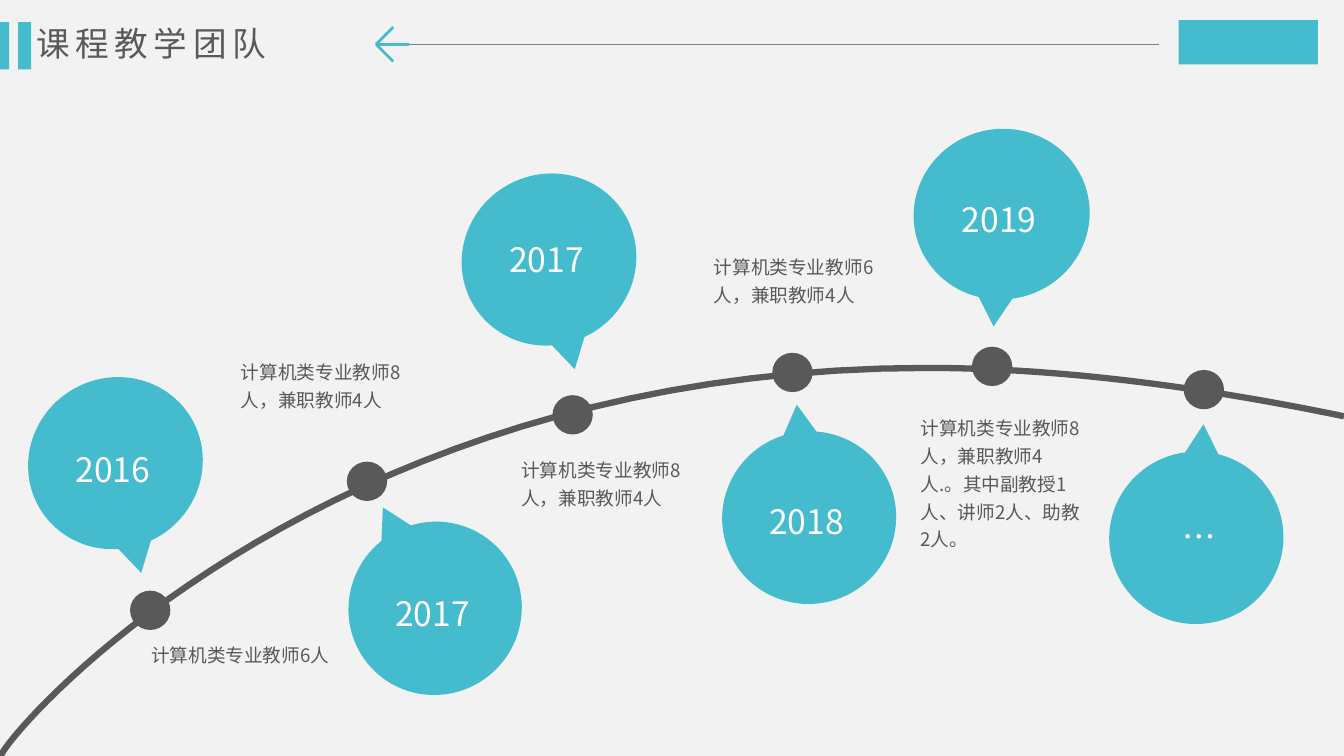
from lxml import etree
from pptx import Presentation
from pptx.dml.color import RGBColor
from pptx.enum.shapes import MSO_CONNECTOR, MSO_SHAPE
from pptx.enum.text import MSO_ANCHOR, MSO_AUTO_SIZE, PP_ALIGN
from pptx.oxml.ns import qn
from pptx.util import Inches, Pt

FONT = "Noto Sans CJK SC"
TEAL, DARK, GRAY, WHITE = "45BBCE", "595959", "808080", "FFFFFF"


def paint(fill, color):
    fill.solid()
    fill.fore_color.rgb = RGBColor.from_string(color)


def write(paragraph, text, size, color):
    """Add a styled run, with the font set for Latin and Chinese alike."""
    run = paragraph.add_run()
    run.text = text
    run.font.size = Pt(size)
    run.font.name = FONT
    paint(run.font.fill, color)
    properties = run.font._element
    etree.SubElement(properties, qn("a:ea")).set("typeface", FONT)
    return properties


presentation = Presentation()
presentation.slide_width = Inches(13.33)
presentation.slide_height = Inches(7.5)
slide = presentation.slides.add_slide(presentation.slide_layouts[5])
shapes = slide.shapes
paint(slide.background.fill, "F2F2F2")

# Header: title, two bars and logo block
title = shapes.title
title.left, title.top = Inches(0.26), Inches(0.18)
title.width, title.height = Inches(3.56), Inches(0.5)
title_frame = title.text_frame
title_frame.auto_size = MSO_AUTO_SIZE.NONE
title_frame.vertical_anchor = MSO_ANCHOR.MIDDLE
title_frame.paragraphs[0].alignment = PP_ALIGN.LEFT
write(title_frame.paragraphs[0], "课程教学团队", 24, DARK).set("spc", "400")

left_bar = (-0.02, 0.22, 0.11, 0.47)
right_bar = (0.18, 0.22, 0.13, 0.47)
logo_block = (11.69, 0.2, 1.38, 0.44)
for box in (left_bar, right_bar, logo_block):
    block = shapes.add_shape(MSO_SHAPE.RECTANGLE, *map(Inches, box))
    paint(block.fill, TEAL)
    block.line.fill.background()
    block.shadow.inherit = False

# Header arrow: a thin rule that ends in a teal head
arrow_tip, arrow_neck, rule_end = (3.73, 0.44), (4.06, 0.44), (11.5, 0.44)
upper_barb, lower_barb = (3.9, 0.27), (3.9, 0.61)
arrow_lines = [(arrow_neck, rule_end, GRAY, 0.5)]
arrow_lines += [(arrow_tip, end, TEAL, 2) for end in (upper_barb, lower_barb, arrow_neck)]
for start, end, color, width in arrow_lines:
    connector = shapes.add_connector(MSO_CONNECTOR.STRAIGHT, *map(Inches, start + end))
    paint(connector.line.fill, color)
    connector.line.width = Pt(width)
    etree.SubElement(connector._element.spPr, qn("a:effectLst"))

# Timeline arc: two cubic Bézier curves that meet at the crest
STEPS = 40
crest = (9.19, 3.65)
rise = [(0.01, 7.5), (0.01, 7.36), (3.07, 3.65), crest]
descent = [crest, (10.48, 3.65), (11.88, 3.83), (13.33, 4.13)]
arc_points = []
for controls in (rise, descent):
    for step in range(STEPS + 1):
        t = step / STEPS
        weights = ((1 - t) ** 3, 3 * t * (1 - t) ** 2, 3 * t ** 2 * (1 - t), t ** 3)
        x = sum(weight * control[0] for weight, control in zip(weights, controls))
        y = sum(weight * control[1] for weight, control in zip(weights, controls))
        arc_points.append((Inches(x), Inches(y)))
builder = shapes.build_freeform(*arc_points[0])
builder.add_line_segments(arc_points[1:], close=False)
arc = builder.convert_to_shape()
arc.fill.background()
paint(arc.line.fill, DARK)
arc.line.width = Pt(4.5)
arc.shadow.inherit = False

# Milestones: year, dot position, bubble position, size and rotation, top of the year
DOT_SIZE = (0.4, 0.39)
ABOVE_ARC, BELOW_ARC = (1.75, 1.69), (1.73, 1.71)
YEAR_HEIGHT = 0.51
milestones = [
    ("2016", (1.29, 5.86), (0.27, 3.75), ABOVE_ARC, 327.7, 4.4),
    ("2017", (3.44, 4.58), (3.45, 5.18), BELOW_ARC, 134, 5.83),
    ("2017", (5.48, 3.92), (4.57, 1.73), ABOVE_ARC, 327.7, 2.32),
    ("2018", (7.66, 3.5), (7.16, 4.28), BELOW_ARC, 155.1, 4.92),
    ("2019", (9.64, 3.44), (9.06, 1.28), ABOVE_ARC, 345.1, 1.92),
    ("…", (11.74, 3.67), (11, 4.48), BELOW_ARC, 165, 5.07),
]
for year, dot_position, bubble_position, bubble_size, rotation, year_top in milestones:
    dot = shapes.add_shape(MSO_SHAPE.OVAL, *map(Inches, dot_position + DOT_SIZE))
    bubble = shapes.add_shape(
        MSO_SHAPE.OVAL_CALLOUT, *map(Inches, bubble_position + bubble_size))
    bubble.rotation = rotation
    for shape, color in ((dot, DARK), (bubble, TEAL)):
        paint(shape.fill, color)
        shape.line.fill.background()
        shape.shadow.inherit = False

    # The year stays upright, so it sits in its own box centred across the bubble
    year_width = 0.49 if year == "…" else 1.01
    year_left = bubble_position[0] + (bubble_size[0] - year_width) / 2
    year_box = (year_left, year_top, year_width, YEAR_HEIGHT)
    year_frame = shapes.add_textbox(*map(Inches, year_box)).text_frame
    year_frame.word_wrap = False
    year_frame.auto_size = MSO_AUTO_SIZE.SHAPE_TO_FIT_TEXT
    year_frame.margin_left = year_frame.margin_right = Inches(0.11)
    write(year_frame.paragraphs[0], year, 24, WHITE)

# Staff numbers beside the milestones
staff_notes = [
    ("计算机类专业教师6人", (1.5, 6.33, 1.93, 0.36)),
    ("计算机类专业教师8人，兼职教师4人", (2.39, 3.53, 1.61, 0.89)),
    ("计算机类专业教师8人，兼职教师4人", (5.17, 4.5, 1.66, 0.81)),
    ("计算机类专业教师6人，兼职教师4人", (7.08, 2.48, 1.61, 0.77)),
    ("计算机类专业教师8人，兼职教师4人.。其中副教授1人、讲师2人、助教2人。",
     (9.13, 4.08, 1.61, 1.34)),
]
for text, box in staff_notes:
    frame = shapes.add_textbox(*map(Inches, box)).text_frame
    frame.word_wrap = True
    frame.margin_left = frame.margin_right = frame.margin_top = frame.margin_bottom = 0
    frame.paragraphs[0].line_spacing = 1.25
    write(frame.paragraphs[0], text, 13.3, DARK)

presentation.save("out.pptx")
